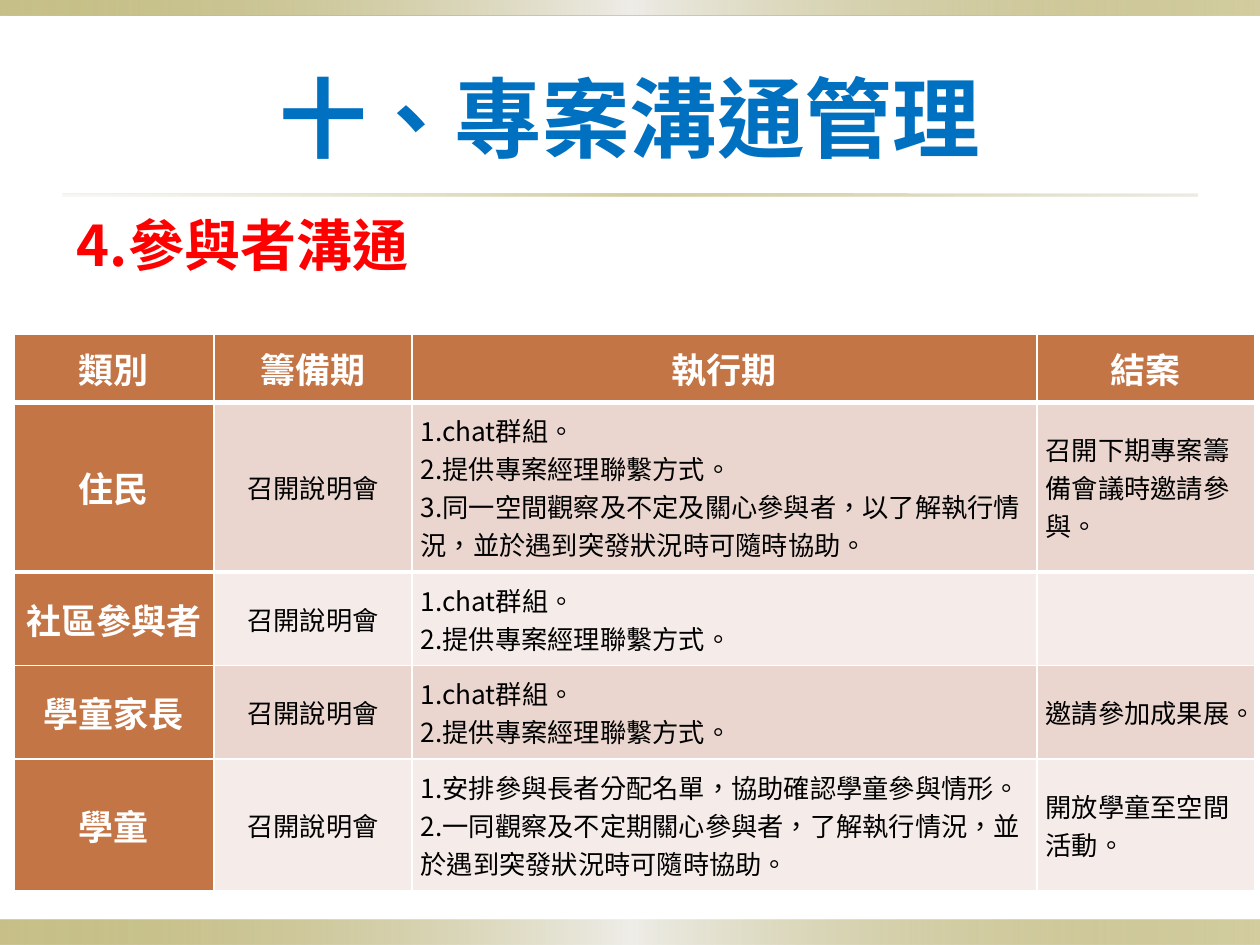
from lxml.etree import SubElement
from pptx import Presentation
from pptx.dml.color import RGBColor
from pptx.enum.shapes import MSO_SHAPE as Shape
from pptx.enum.text import MSO_ANCHOR as Anchor, PP_ALIGN as Align
from pptx.oxml.ns import qn
from pptx.util import Inches, Pt

FONT = "Noto Sans CJK SC"
WHITE, BLACK, BLUE, RED = "FFFFFF", "000000", "0070C0", "FF0000"
HEADER_FILL, BAND_FILLS = "C47546", ("EAD6CF", "F5ECE9")

TITLE = "十、專案溝通管理"
SUBTITLE = "4.參與者溝通"
BRIEFING = "召開說明會"
CONTACT = ["1.chat群組。", "2.提供專案經理聯繫方式。"]
HEADER = ["類別", "籌備期", "執行期", "結案"]
# group, preparation, execution, closing
GROUPS = [
    ("住民", BRIEFING,
     CONTACT + ["3.同一空間觀察及不定及關心參與者，以了解執行情況，並於遇到突發狀況時可隨時協助。"],
     "召開下期專案籌備會議時邀請參與。"),
    ("社區參與者", BRIEFING, CONTACT, ""),
    ("學童家長", BRIEFING, CONTACT, "邀請參加成果展。"),
    ("學童", BRIEFING,
     ["1.安排參與長者分配名單，協助確認學童參與情形。",
      "2.一同觀察及不定期關心參與者，了解執行情況，並於遇到突發狀況時可隨時協助。"],
     "開放學童至空間活動。"),
]
COLUMN_WIDTHS = [1.59, 1.57, 4.96, 1.73]
ROW_HEIGHTS = [0.54, 1.34, 0.74, 0.74, 1.04]

# Gradient stops: position %, colour, opacity %
BAND_STOPS = [(0, "918415", 50), (50, "EEEDE8", 100), (100, "918415", 40)]
RULE_STOPS = [(0, "DCD9CC", 20), (50, "918415", 40), (100, "DCD9CC", 50)]
BARS = [
    ((0, 7.3, 10, 0.2), BAND_STOPS),
    ((0, 0, 10, 0.12), BAND_STOPS),
    ((0.5, 1.54, 9, 0.02), RULE_STOPS),
]


def rgb(color):
    return RGBColor.from_string(color)


def place(part, box):
    part.left, part.top, part.width, part.height = map(Inches, box)


def write(paragraph, text, size, color, bold, align):
    paragraph.alignment = align
    run = paragraph.add_run()
    run.text = text
    font = run.font
    font.name, font.size, font.bold = FONT, Pt(size), bold
    font.color.rgb = rgb(color)
    props = font._element
    props.set("lang", "zh-TW")
    SubElement(props, qn("a:ea")).set("typeface", FONT)


def add_bar(slide, box, stops):
    bar = slide.shapes.add_shape(Shape.RECTANGLE, *map(Inches, box))
    bar.shadow.inherit = False
    bar.line.fill.background()
    bar.fill.gradient()
    bar.fill.gradient_angle = 0
    stop_list = bar._element.spPr.find(".//" + qn("a:gsLst"))
    for old_stop in list(stop_list):
        stop_list.remove(old_stop)
    for position, color, opacity in stops:
        stop = SubElement(stop_list, qn("a:gs"), pos=str(position * 1000))
        tint = SubElement(stop, qn("a:srgbClr"), val=color)
        SubElement(tint, qn("a:alpha"), val=str(opacity * 1000))


def add_border(cell, side, color, width):
    cell_props = cell._tc.get_or_add_tcPr()
    border = SubElement(cell_props, qn("a:" + side), w=str(Pt(width)))
    SubElement(SubElement(border, qn("a:solidFill")), qn("a:srgbClr"), val=color)


def fill_cell(cell, row, column, content):
    is_heading = row == 0 or column == 0
    # Borders precede the fill in the cell properties
    if row == 1:
        add_border(cell, "lnT", WHITE, 3)
    if row == 0:
        add_border(cell, "lnB", WHITE, 3)
    cell.fill.solid()
    cell.fill.fore_color.rgb = rgb(HEADER_FILL if is_heading else BAND_FILLS[(row - 1) % 2])
    cell.margin_left = cell.margin_right = Inches(0.07)
    cell.margin_top = cell.margin_bottom = Inches(0.07)
    cell.vertical_anchor = Anchor.MIDDLE
    size, color = (20, WHITE) if is_heading else (15, BLACK)
    align = Align.CENTER if row == 0 or column < 2 else Align.LEFT
    lines = content if isinstance(content, list) else [content]
    frame = cell.text_frame
    for index, line in enumerate(lines):
        paragraph = frame.paragraphs[0] if index == 0 else frame.add_paragraph()
        if line:
            write(paragraph, line, size, color, is_heading, align)


def main():
    deck = Presentation()
    deck.slide_width, deck.slide_height = Inches(10), Inches(7.5)
    slide = deck.slides.add_slide(deck.slide_layouts[1])

    # Decorative bands and rule
    for box, stops in BARS:
        add_bar(slide, box, stops)

    # Title and subtitle
    title, body = slide.shapes.title, slide.placeholders[1]
    place(title, (0.5, 0.3, 9, 1.25))
    title.text_frame.vertical_anchor = Anchor.MIDDLE
    write(title.text_frame.paragraphs[0], TITLE, 50, BLUE, True, Align.CENTER)
    place(body, (0.51, 1.62, 9, 5.13))
    subtitle = body.text_frame.paragraphs[0]
    write(subtitle, SUBTITLE, 32, RED, True, Align.LEFT)
    subtitle_props = subtitle._p.get_or_add_pPr()
    subtitle_props.set("marL", "0")
    subtitle_props.set("indent", "0")
    SubElement(subtitle_props, qn("a:buNone"))

    # Communication table
    rows = [HEADER] + GROUPS
    table = slide.shapes.add_table(
        len(rows), len(HEADER), Inches(0.11), Inches(2.65),
        Inches(sum(COLUMN_WIDTHS)), Inches(sum(ROW_HEIGHTS))).table
    table.first_col = True
    for column, width in zip(table.columns, COLUMN_WIDTHS):
        column.width = Inches(width)
    for table_row, height in zip(table.rows, ROW_HEIGHTS):
        table_row.height = Inches(height)
    for row, contents in enumerate(rows):
        for column, content in enumerate(contents):
            fill_cell(table.cell(row, column), row, column, content)

    deck.save("out.pptx")


if __name__ == "__main__":
    main()
